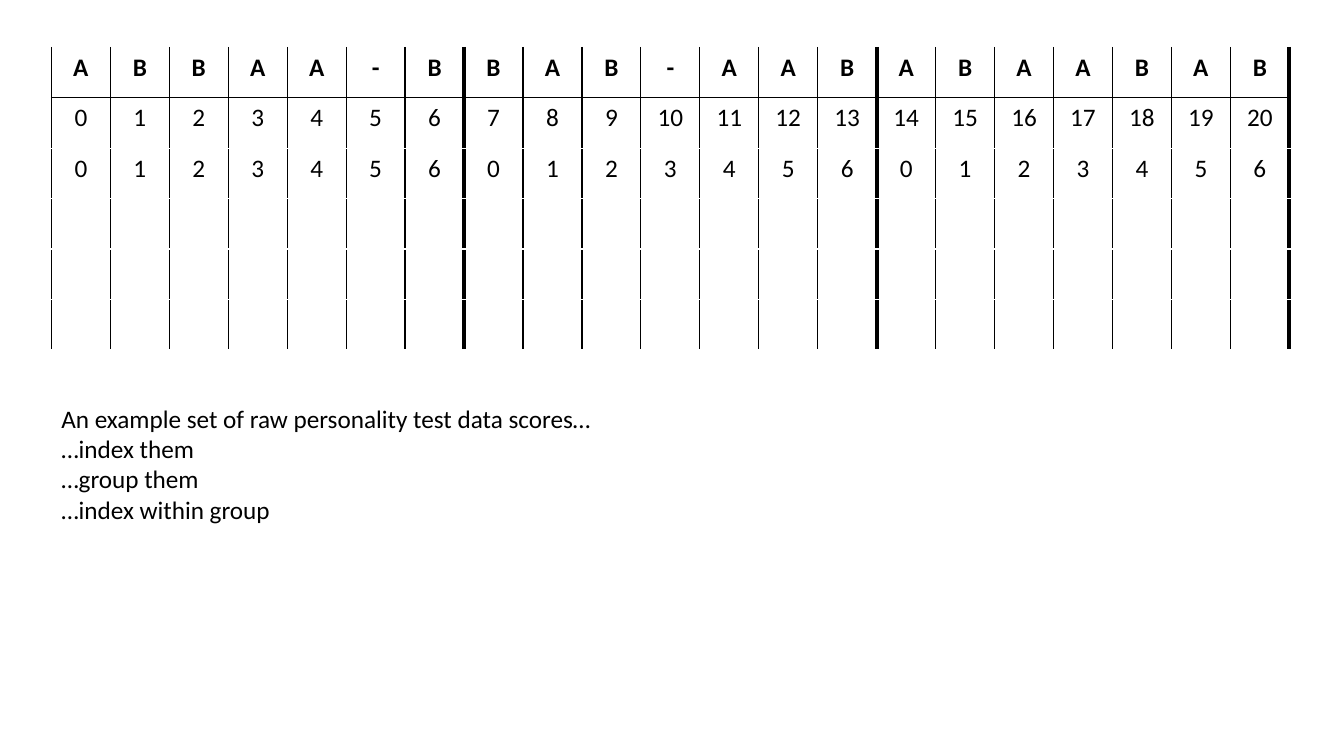
from lxml.etree import SubElement
from pptx import Presentation
from pptx.dml.color import RGBColor
from pptx.enum.text import PP_ALIGN as Align
from pptx.oxml.ns import qn
from pptx.util import Inches, Pt

GROUP_SIZE = 7
SCORES = list("ABBAA-BBAB-AABABAABAB")
EMPTY_ROWS = 3
STEPS = [
    "An example set of raw personality test data scores…",
    "…index them",
    "…group them",
    "…index within group",
]


def color(hex_code):
    return RGBColor.from_string(hex_code)


class ScoreSlide:
    """Hold the slide and its style, and add the elements to it."""

    font, size = "Calibri", 18
    ink, paper = "000000", "FFFFFF"
    thin, thick = 1, 3

    def __init__(self, deck):
        self.slide = deck.slides.add_slide(deck.slide_layouts[6])

    def style(self, paragraph, bold=False, align=Align.LEFT):
        paragraph.alignment = align
        for run in paragraph.runs:
            run.font.name = self.font
            run.font.size = Pt(self.size)
            run.font.bold = bold
            run.font.color.rgb = color(self.ink)

    def border(self, cell, side, hex_code, width):
        properties = cell._tc.get_or_add_tcPr()
        line = SubElement(properties, qn(f"a:ln{side}"), w=str(Pt(width)))
        fill = SubElement(line, qn("a:solidFill"))
        SubElement(fill, qn("a:srgbClr"), val=hex_code)

    def edge_width(self, edge):
        return self.thick if edge and edge % GROUP_SIZE == 0 else self.thin

    def cell(self, cell, value, row, column):
        below_header = self.ink if row == 1 else self.paper
        under_cell = self.ink if row == 0 else self.paper
        self.border(cell, "L", self.ink, self.edge_width(column))
        self.border(cell, "R", self.ink, self.edge_width(column + 1))
        self.border(cell, "T", below_header, self.thin)
        self.border(cell, "B", under_cell, self.thin)
        cell.fill.solid()
        cell.fill.fore_color.rgb = color(self.paper)
        cell.text_frame.text = value
        self.style(cell.text_frame.paragraphs[0], row == 0, Align.CENTER)

    def table(self, rows, left, top, width, height):
        frame = self.slide.shapes.add_table(
            len(rows), len(rows[0]),
            Inches(left), Inches(top), Inches(width), Inches(height))
        grid = frame.table
        grid.horz_banding = False
        for row, values in enumerate(rows):
            for column, value in enumerate(values):
                self.cell(grid.cell(row, column), value, row, column)

    def text(self, lines, left, top, width, height):
        box = self.slide.shapes.add_textbox(
            Inches(left), Inches(top), Inches(width), Inches(height))
        box.text_frame.word_wrap = True
        box.text_frame.text = "\n".join(lines)
        for paragraph in box.text_frame.paragraphs:
            self.style(paragraph)


def main():
    deck = Presentation()
    deck.slide_width, deck.slide_height = Inches(13.33), Inches(7.5)
    count = len(SCORES)
    indexes = [str(i) for i in range(count)]
    group_indexes = [str(i % GROUP_SIZE) for i in range(count)]
    rows = [SCORES, indexes, group_indexes] + [[""] * count] * EMPTY_ROWS

    slide = ScoreSlide(deck)
    slide.table(rows, 0.51, 0.47, 12.28, 3)
    slide.text(STEPS, 0.51, 3.95, 7.07, 1.62)
    deck.save("out.pptx")


if __name__ == "__main__":
    main()
